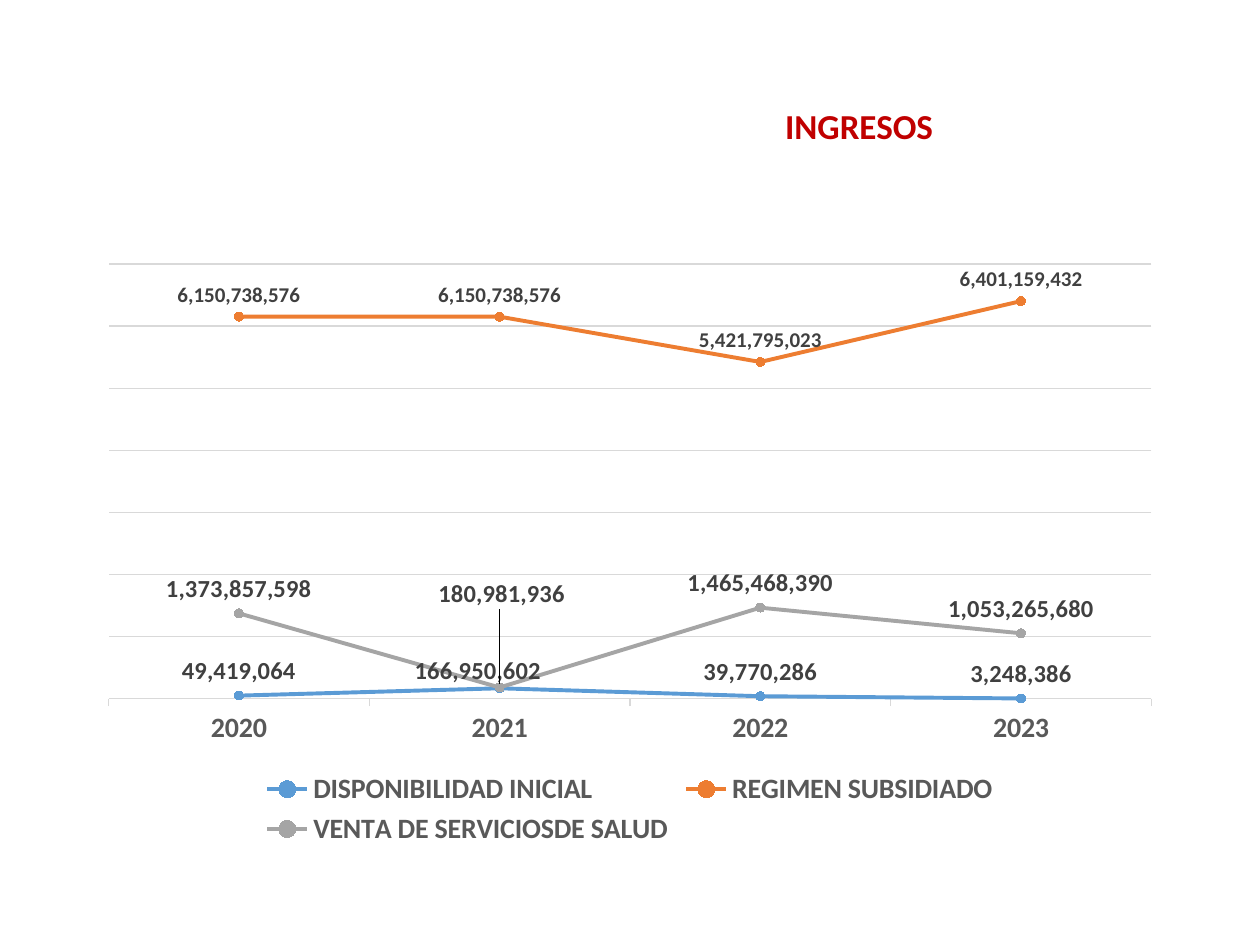
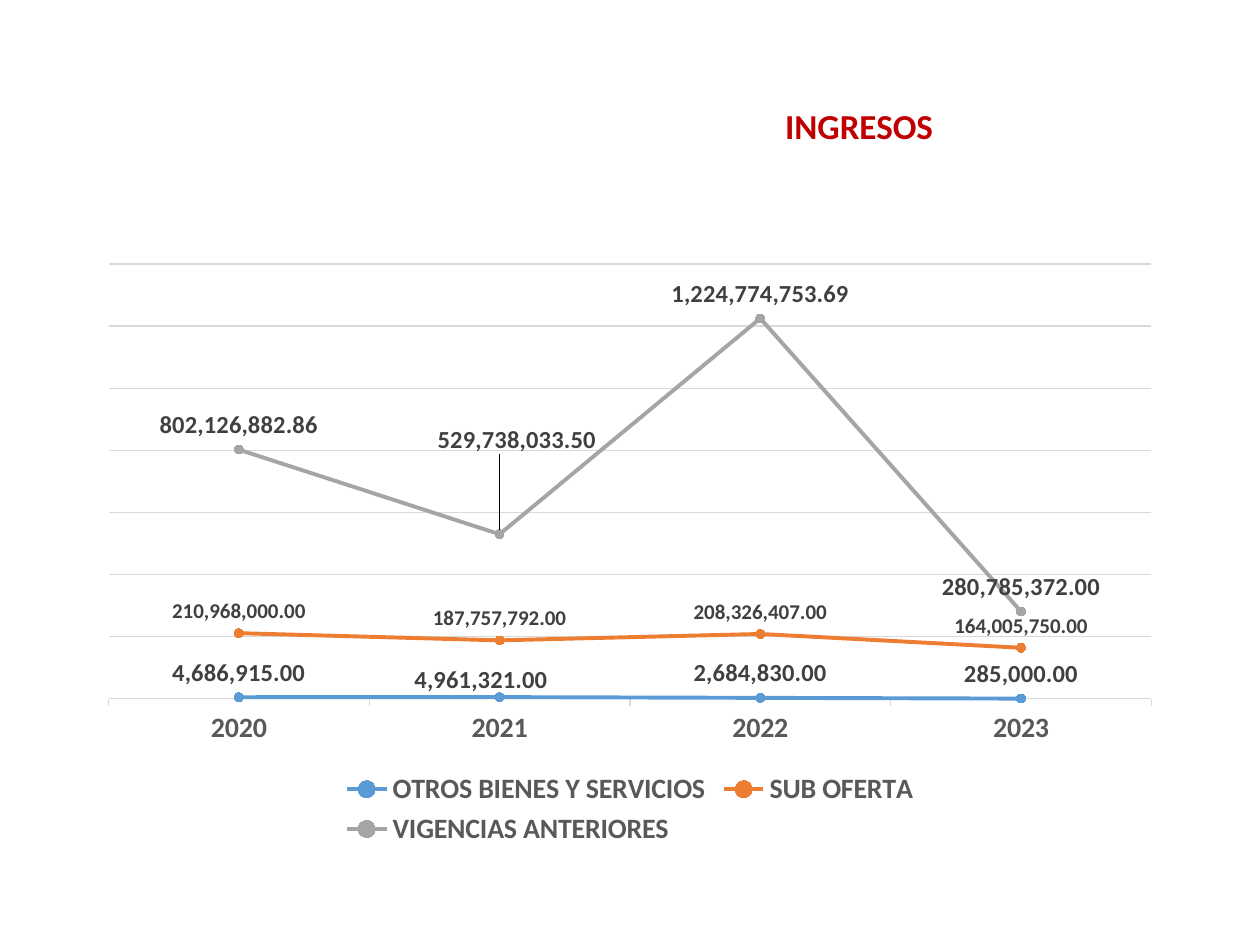
import pptx
import pptx.chart.data
import pptx.dml.color
import pptx.enum.chart
import pptx.enum.text
import pptx.oxml
import pptx.oxml.ns
import pptx.util

Cm = pptx.util.Cm
Pt = pptx.util.Pt

FONT = "Calibri"
COLORS = {
    "title": "C00000",
    "axis_text": "595959",
    "label": "404040",
    "rule": "D9D9D9",
    "series": ["5B9BD5", "ED7D31", "A5A5A5"],
}
LABEL_SIZES = [14, 12, 14]
YEARS = ["2020", "2021", "2022", "2023"]
TITLE_BOX = (Cm(11.07), Cm(1.42), Cm(12.5), Cm(2.34))
CHART_BOX = (Cm(1.75), Cm(5.08), Cm(21.9), Cm(12.09))
PLOT_AREA = {"x": 0.02, "y": 0.02, "w": 0.96, "h": 0.725}
MOVED_POINT = YEARS.index("2021")

# Each series: name, values by year, shift of its 2021 label (fractions of the chart)
INCOME_SLIDES = [
    ("#,##0", [
        ("DISPONIBILIDAD INICIAL",
         [49419064, 166950602, 39770286, 3248386], (-0.02, 0.012)),
        ("REGIMEN SUBSIDIADO",
         [6150738576, 6150738576, 5421795023, 6401159432], None),
        ("VENTA DE SERVICIOSDE SALUD",
         [1373857598, 180981936, 1465468390, 1053265680], (0.002, -0.115)),
    ]),
    ("#,##0.00", [
        ("OTROS BIENES Y SERVICIOS",
         [4686915, 4961321, 2684830, 285000], (-0.017, 0.012)),
        ("SUB OFERTA",
         [210968000, 187757792, 208326407, 164005750], None),
        ("VIGENCIAS ANTERIORES",
         [802126882.86, 529738033.5, 1224774753.69, 280785372], (0.016, -0.117)),
    ]),
]


def rgb(hex_color):
    return pptx.dml.color.RGBColor.from_string(hex_color)


def style_font(font, size, color):
    font.name = FONT
    font.size = Pt(size)
    font.bold = True
    font.color.rgb = rgb(color)


def style_line(line, color, width):
    line.color.rgb = rgb(color)
    line.width = Pt(width)


def manual_layout(settings):
    """Return a c:layout element holding the given settings in schema order."""
    items = "".join(f'<c:{tag} val="{value}"/>' for tag, value in settings.items())
    return pptx.oxml.parse_xml(
        f'<c:layout {pptx.oxml.ns.nsdecls("c")}>'
        f"<c:manualLayout>{items}</c:manualLayout></c:layout>")


def fix_plot_area(chart):
    plot_area = chart.element.find(".//" + pptx.oxml.ns.qn("c:plotArea"))
    for layout in plot_area.findall(pptx.oxml.ns.qn("c:layout")):
        plot_area.remove(layout)
    plot_area.insert(0, manual_layout({
        "layoutTarget": "inner", "xMode": "edge", "yMode": "edge", **PLOT_AREA}))


def move_label(series, shift, size):
    label = series.points[MOVED_POINT].data_label
    style_font(label.font, size, COLORS["label"])
    label.position = pptx.enum.chart.XL_LABEL_POSITION.ABOVE
    index = series.data_labels._element.find(
        pptx.oxml.ns.qn("c:dLbl")).find(pptx.oxml.ns.qn("c:idx"))
    index.addnext(manual_layout({"x": shift[0], "y": shift[1]}))


def style_series(series, color, label_size, number_format, shift):
    series.smooth = False
    style_line(series.format.line, color, 2.25)
    marker = series.marker
    marker.style = pptx.enum.chart.XL_MARKER_STYLE.CIRCLE
    marker.size = 5
    marker.format.fill.solid()
    marker.format.fill.fore_color.rgb = rgb(color)
    style_line(marker.format.line, color, 0.75)
    labels = series.data_labels
    labels.show_value = True
    labels.position = pptx.enum.chart.XL_LABEL_POSITION.ABOVE
    labels.number_format = number_format
    labels.number_format_is_linked = False
    style_font(labels.font, label_size, COLORS["label"])
    if shift:
        move_label(series, shift, label_size)


def style_axes(chart):
    years = chart.category_axis
    years.major_tick_mark = pptx.enum.chart.XL_TICK_MARK.OUTSIDE
    style_font(years.tick_labels.font, 16, COLORS["axis_text"])
    style_line(years.format.line, COLORS["rule"], 0.75)
    amounts = chart.value_axis
    amounts.visible = False
    amounts.has_major_gridlines = True
    style_line(amounts.major_gridlines.format.line, COLORS["rule"], 0.75)


def add_title(slide, box):
    title = slide.shapes.title
    title.left, title.top, title.width, title.height = box
    frame = title.text_frame
    frame.text = "INGRESOS"
    frame.vertical_anchor = pptx.enum.text.MSO_ANCHOR.MIDDLE
    paragraph = frame.paragraphs[0]
    paragraph.alignment = pptx.enum.text.PP_ALIGN.CENTER
    paragraph.line_spacing = 0.9
    style_font(paragraph.runs[0].font, 20, COLORS["title"])


def add_income_chart(slide, box, number_format, income_series):
    data = pptx.chart.data.CategoryChartData(number_format=number_format)
    data.categories = YEARS
    for name, values, _ in income_series:
        data.add_series(name, values)
    chart = slide.shapes.add_chart(
        pptx.enum.chart.XL_CHART_TYPE.LINE_MARKERS, *box, data).chart
    chart.font.name = FONT
    chart.font.size = Pt(10)
    chart.has_title = False
    chart.has_legend = True
    chart.legend.position = pptx.enum.chart.XL_LEGEND_POSITION.BOTTOM
    chart.legend.include_in_layout = False
    style_font(chart.legend.font, 16, COLORS["axis_text"])
    chart.plots[0].vary_by_categories = False
    style_axes(chart)
    fix_plot_area(chart)
    for series, color, size, (_, _, shift) in zip(
            chart.plots[0].series, COLORS["series"], LABEL_SIZES, income_series):
        style_series(series, color, size, number_format, shift)


def add_income_slide(deck, number_format, income_series):
    title_only = deck.slide_layouts.get_by_name("Title Only")
    slide = deck.slides.add_slide(title_only)
    add_title(slide, TITLE_BOX)
    add_income_chart(slide, CHART_BOX, number_format, income_series)


def main():
    deck = pptx.Presentation()
    deck.slide_width = Cm(25.4)
    deck.slide_height = Cm(19.05)
    for number_format, income_series in INCOME_SLIDES:
        add_income_slide(deck, number_format, income_series)
    deck.save("out.pptx")


if __name__ == "__main__":
    main()
